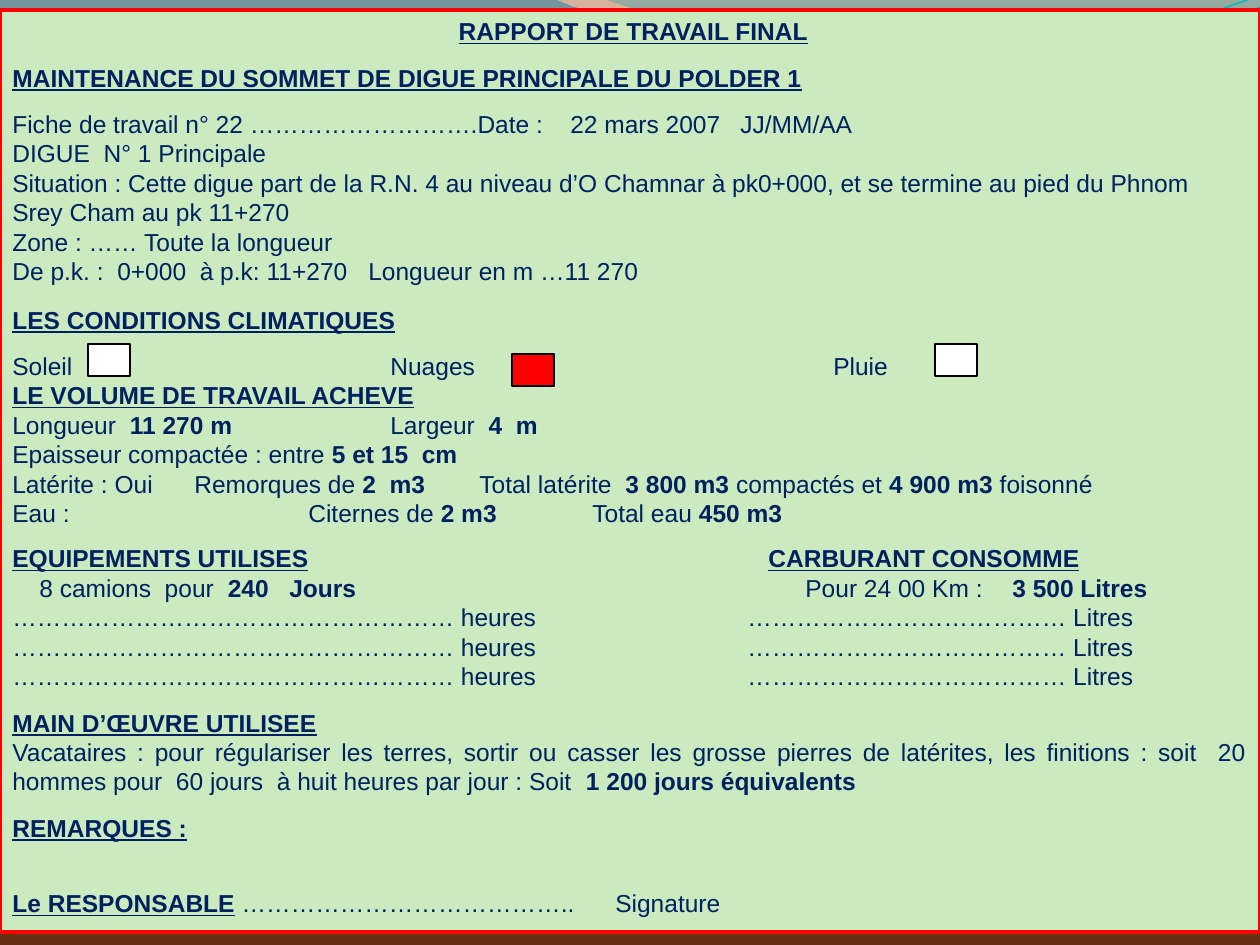
from lxml import etree
from pptx import Presentation
from pptx.dml.color import RGBColor
from pptx.enum.shapes import MSO_SHAPE
from pptx.enum.text import MSO_ANCHOR, PP_ALIGN
from pptx.oxml.ns import qn
from pptx.util import Pt

PX = 914400 // 126
RECTANGLE = MSO_SHAPE.RECTANGLE
TOP = MSO_ANCHOR.TOP
LEFT, CENTER, JUSTIFY = PP_ALIGN.LEFT, PP_ALIGN.CENTER, PP_ALIGN.JUSTIFY
COLORS = {"navy": "002060", "green": "CBEAC0", "red": "FF0000", "white": "FFFFFF",
          "black": "000000", "teal": "0AB8BF", "blue": "0F6FC6"}
COLORS = {name: RGBColor.from_string(value) for name, value in COLORS.items()}


def paint_gradient(fill, owner, stops):
    """Vertical gradient from (position %, colour, opacity %) stops."""
    fill.gradient()
    fill.gradient_angle = 270
    stop_list = next(owner.iter(qn("a:gsLst")))
    for old in list(stop_list):
        stop_list.remove(old)
    for position, color, opacity in stops:
        stop = etree.SubElement(stop_list, qn("a:gs"), pos=str(position * 1000))
        rgb = etree.SubElement(stop, qn("a:srgbClr"), val=color)
        if opacity < 100:
            etree.SubElement(rgb, qn("a:alpha"), val=str(opacity * 1000))


def write(paragraph, text, align, gap=0, tabs=()):
    """Fill a paragraph: *bold*, _bold underlined_; gap and tabs in px."""
    layout = {"alignment": align, "line_spacing": Pt(16.8),
              "space_before": gap * PX, "space_after": 0}
    for key, value in layout.items():
        setattr(paragraph, key, value)
    if tabs:
        tab_list = etree.SubElement(paragraph._p.get_or_add_pPr(), qn("a:tabLst"))
        for tab in tabs:
            etree.SubElement(tab_list, qn("a:tab"), pos=str(tab * PX), algn="l")
    for i, outer in enumerate(text.split("*")):
        for j, part in enumerate(outer.split("_")):
            if not part:
                continue
            run = paragraph.add_run()
            run.text = part
            look = {"name": "Arial", "size": Pt(14), "bold": i % 2 + j % 2 > 0,
                    "underline": j % 2 > 0}
            for key, value in look.items():
                setattr(run.font, key, value)
            run.font.color.rgb = COLORS["navy"]


prs = Presentation()
prs.slide_width, prs.slide_height = 1260 * PX, 945 * PX
slide = prs.slides.add_slide(prs.slide_layouts[6])
shapes = slide.shapes

# Background
paint_gradient(slide.background.fill, slide.element,
               [(0, "D6B19C", 100), (30, "D49E6C", 100), (70, "A65528", 100), (100, "663012", 100)])

# Waves at the top: pairs are line ends, sextuples are Bézier curves
WAVES = [
    ([(0, 0), (554, -1), (600, 21, 837, 79, 955, 79), (1075, 79, 1207, 33, 1260, 11),
      (1261, 45), (1239, 55, 1096, 96, 940, 95), (784, 95, 481, 35, 324, 43),
      (163, 45, 58, 105, -1, 142)], [(0, "0074A1", 45), (100, "00C6CF", 55)], None),
    ([(604, -1), (641, 14, 859, 78, 969, 82), (1079, 87, 1211, 40, 1260, 26), (1260, 0)],
     [(0, "00A1A9", 30), (80, "008BBF", 45)], None),
    ([(0, 140), (60, 117, 199, 72, 349, 66), (498, 59, 747, 112, 898, 101),
      (1050, 89, 1182, 19, 1257, -3)], None, ("teal", 0.85)),
    ([(0, 131), (59, 121, 207, 77, 357, 71), (508, 64, 752, 106, 903, 95),
      (1053, 84, 1186, 26, 1260, 8)], None, ("blue", 0.75)),
]
for outline, stops, stroke in WAVES:
    points = [(part[i] * PX, part[i + 1] * PX) for part in outline for i in range(0, len(part), 2)]
    builder = shapes.build_freeform(*points[0])
    builder.add_line_segments(points[1:], close=stops is not None)
    wave = builder.convert_to_shape()
    wave.shadow.inherit = False
    # Join the three points of each curve into one Bézier segment
    segments = iter(list(wave.element.iter(qn("a:lnTo"))))
    for part in outline[1:]:
        first = next(segments)
        if len(part) == 6:
            first.tag = qn("a:cubicBezTo")
            for _ in range(2):
                extra = next(segments)
                first.append(extra[0])
                extra.getparent().remove(extra)
    if stops:
        paint_gradient(wave.fill, wave.element, stops)
        wave.line.fill.background()
    else:
        wave.fill.background()
        wave.line.color.rgb = COLORS[stroke[0]]
        wave.line.width = Pt(stroke[1])

# Report sheet and weather check boxes
BOXES = [
    (0, 10, 1260, 922, "green", "red", 2.25),
    (512, 354, 42, 32, "red", "black", 0.75),
    (935, 344, 42, 32, "white", "black", 0.75),
    (88, 344, 42, 32, "white", "black", 0.75),
]
boxes = []
for left, top, width, height, fill, line, weight in BOXES:
    box = shapes.add_shape(RECTANGLE, left * PX, top * PX, width * PX, height * PX)
    box.shadow.inherit = False
    box.fill.solid()
    box.fill.fore_color.rgb = COLORS[fill]
    box.line.color.rgb = COLORS[line]
    box.line.width = Pt(weight)
    boxes.append(box)

# Report text: alignment, text, gap above, tab stops
SECTION = 17
HOURS = "……………………………………………… heures\t………………………………… Litres"
LINES = [
    (CENTER, " _RAPPORT DE TRAVAIL FINAL_"),
    (LEFT, "_MAINTENANCE DU SOMMET DE DIGUE PRINCIPALE DU POLDER 1_", SECTION),
    (LEFT, "Fiche de travail n° 22 ……………………….Date :\t22 mars 2007\tJJ/MM/AA", SECTION, (558, 728)),
    (LEFT, "DIGUE  N° 1 Principale"),
    (LEFT, "Situation : Cette digue part de la R.N. 4 au niveau d’O Chamnar à pk0+000, "
           "et se termine au pied du Phnom Srey Cham au pk 11+270"),
    (LEFT, "Zone : …… Toute la longueur"),
    (LEFT, "De p.k. :  0+000  à p.k: 11+270\tLongueur en m …11 270", 0, (356,)),
    (JUSTIFY, "_LES CONDITIONS CLIMATIQUES_", 19),
    (JUSTIFY, "Soleil\tNuages\tPluie", SECTION, (378, 821)),
    (JUSTIFY, "_LE VOLUME DE TRAVAIL ACHEVE_"),
    (JUSTIFY, "Longueur  *11 270 m*\tLargeur  *4  m*", 0, (378,)),
    (JUSTIFY, "Epaisseur compactée : entre *5 et 15  cm*"),
    (JUSTIFY, "Latérite : Oui\tRemorques de *2  m3*\tTotal latérite  *3 800 m3* compactés et "
              "*4 900 m3* foisonné", 0, (182, 467)),
    (JUSTIFY, "Eau :\tCiternes de *2 m3*\tTotal eau *450 m3*", 0, (296, 580)),
    (JUSTIFY, "_EQUIPEMENTS UTILISES_\t_CARBURANT CONSOMME_", 16, (756,)),
    (JUSTIFY, "\t8 camions  pour  *240\tJours*\tPour 24 00 Km :\t*3 500 Litres*",
     0, (27, 277, 793, 1000)),
    *[(JUSTIFY, HOURS, 0, (735,))] * 3,
    (JUSTIFY, "_MAIN D’ŒUVRE UTILISEE_", SECTION),
    (JUSTIFY, "Vacataires : pour régulariser les terres, sortir ou casser les grosse pierres de "
              "latérites, les finitions : soit  20 hommes pour  60 jours  à huit heures par jour : "
              "Soit  *1 200 jours équivalents*"),
    (JUSTIFY, "_REMARQUES :_", SECTION),
    (JUSTIFY, "_Le RESPONSABLE_ …………………………………..\tSignature", 46, (603,)),
]
sheet = boxes[0].text_frame
sheet.vertical_anchor = TOP
sheet.word_wrap = True
for index, line in enumerate(LINES):
    paragraph = sheet.add_paragraph() if index else sheet.paragraphs[0]
    write(paragraph, line[1], line[0], *line[2:])

prs.save("out.pptx")
